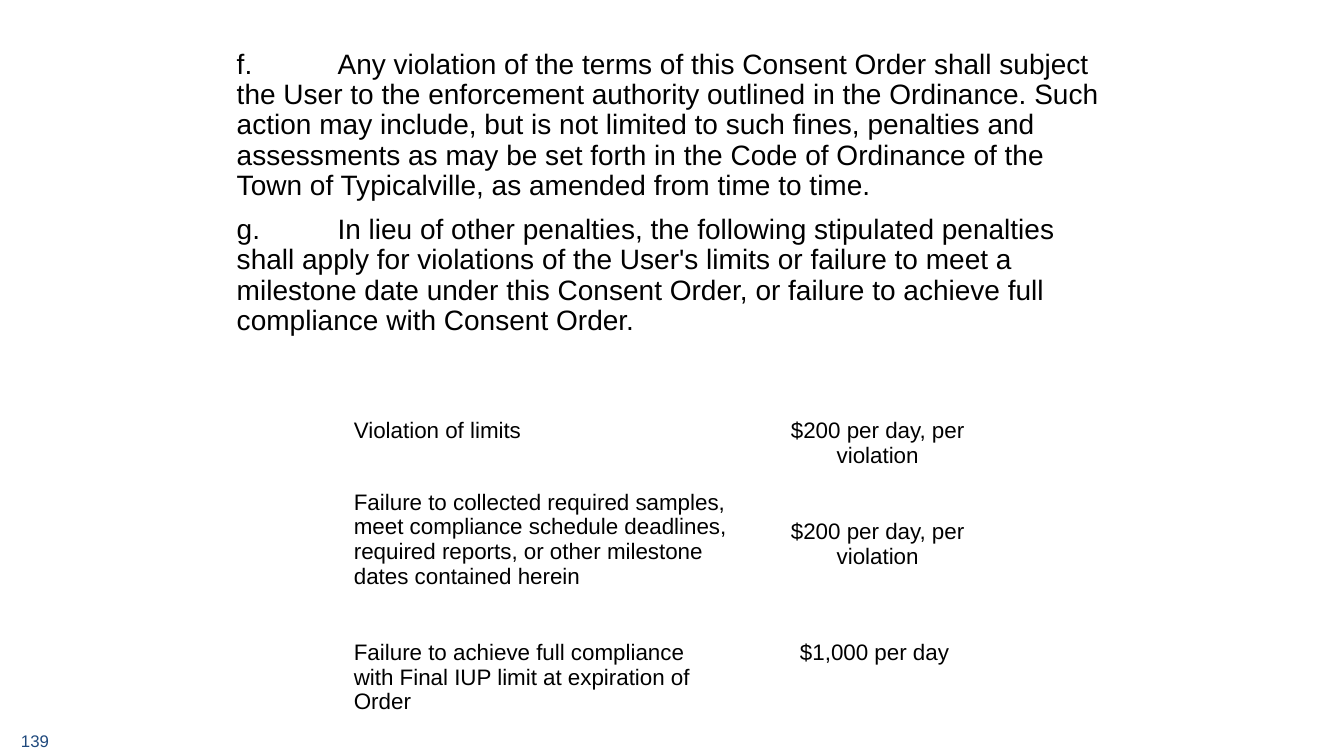
from lxml.etree import SubElement
from pptx import Presentation
from pptx.dml.color import RGBColor
from pptx.enum.text import MSO_ANCHOR, PP_ALIGN
from pptx.oxml.ns import qn
from pptx.util import Inches, Pt

COLORS = {"text": "000000", "number": "1F497D", "background": "FFFFFF"}

CLAUSES = [
    "f. \tAny violation of the terms of this Consent Order shall subject the User to the "
    "enforcement authority outlined in the Ordinance. Such action may include, but is not "
    "limited to such fines, penalties and assessments as may be set forth in the Code of "
    "Ordinance of the Town of Typicalville, as amended from time to time.",
    "g. \tIn lieu of other penalties, the following stipulated penalties shall apply for "
    "violations of the User's limits or failure to meet a milestone date under this Consent "
    "Order, or failure to achieve full compliance with Consent Order.",
]

TOP, LOWERED = 0.05, 0.34
PENALTIES = [
    (1.0, ("Violation of limits", LOWERED), ("$200 per day, per violation", LOWERED)),
    (
        1.49,
        (
            "Failure to collected required samples, meet compliance schedule deadlines, "
            "required reports, or other milestone dates contained herein",
            TOP,
        ),
        ("$200 per day, per violation", LOWERED),
    ),
    (
        0.9,
        ("Failure to achieve full compliance with Final IUP limit at expiration of Order", TOP),
        ("$1,000 per day ", TOP),
    ),
]


class SlideBuilder:
    font_name = "Arial"

    def __init__(self, presentation):
        self.slide = presentation.slides.add_slide(presentation.slide_layouts[6])
        fill = self.slide.background.fill
        fill.solid()
        fill.fore_color.rgb = RGBColor.from_string(COLORS["background"])

    def style(self, paragraph, size, color="text"):
        for run in paragraph.runs:
            run.font.name = self.font_name
            run.font.size = Pt(size)
            run.font.color.rgb = RGBColor.from_string(COLORS[color])

    def tab_stop(self, paragraph, position):
        properties = paragraph._p.get_or_add_pPr()
        tab_list = SubElement(properties, qn("a:tabLst"))
        SubElement(tab_list, qn("a:tab"), pos=str(Inches(position)), algn="l")

    def text(self, box, lines, size, color="text", anchor=MSO_ANCHOR.TOP,
             line_spacing=1.0, gap=0, tab=None):
        shape = self.slide.shapes.add_textbox(*map(Inches, box))
        text_frame = shape.text_frame
        text_frame.word_wrap = True
        text_frame.vertical_anchor = anchor
        text_frame.text = "\n".join(lines)
        for index, paragraph in enumerate(text_frame.paragraphs):
            paragraph.line_spacing = line_spacing
            paragraph.space_before = Pt(gap if index else 0)
            if tab:
                self.tab_stop(paragraph, tab)
            self.style(paragraph, size, color)

    def table(self, box, widths, rows, alignments, size):
        shape = self.slide.shapes.add_table(len(rows), len(widths), *map(Inches, box))
        table = shape.table
        table.first_row = False
        table.horz_banding = False
        for column, width in zip(table.columns, widths):
            column.width = Inches(width)
        for row, (height, *entries) in zip(table.rows, rows):
            row.height = Inches(height)
            for cell, (text, margin_top), alignment in zip(row.cells, entries, alignments):
                cell.fill.background()
                cell.margin_top = Inches(margin_top)
                cell.text_frame.text = text
                paragraph = cell.text_frame.paragraphs[0]
                paragraph.alignment = alignment
                self.style(paragraph, size)


def main():
    presentation = Presentation()
    presentation.slide_width = Inches(13.33)
    presentation.slide_height = Inches(7.5)
    builder = SlideBuilder(presentation)
    builder.text((2.25, 0.45, 8.83, 2.97), CLAUSES, 20, line_spacing=0.9, gap=10, tab=1)
    builder.table((3.41, 3.81, 6.67, 3.39), (3.92, 2.75), PENALTIES,
                  (PP_ALIGN.LEFT, PP_ALIGN.CENTER), 16)
    builder.text((0.11, 7.27, 3, 0.15), ["139"], 12, "number", MSO_ANCHOR.MIDDLE)
    presentation.save("out.pptx")


if __name__ == "__main__":
    main()
